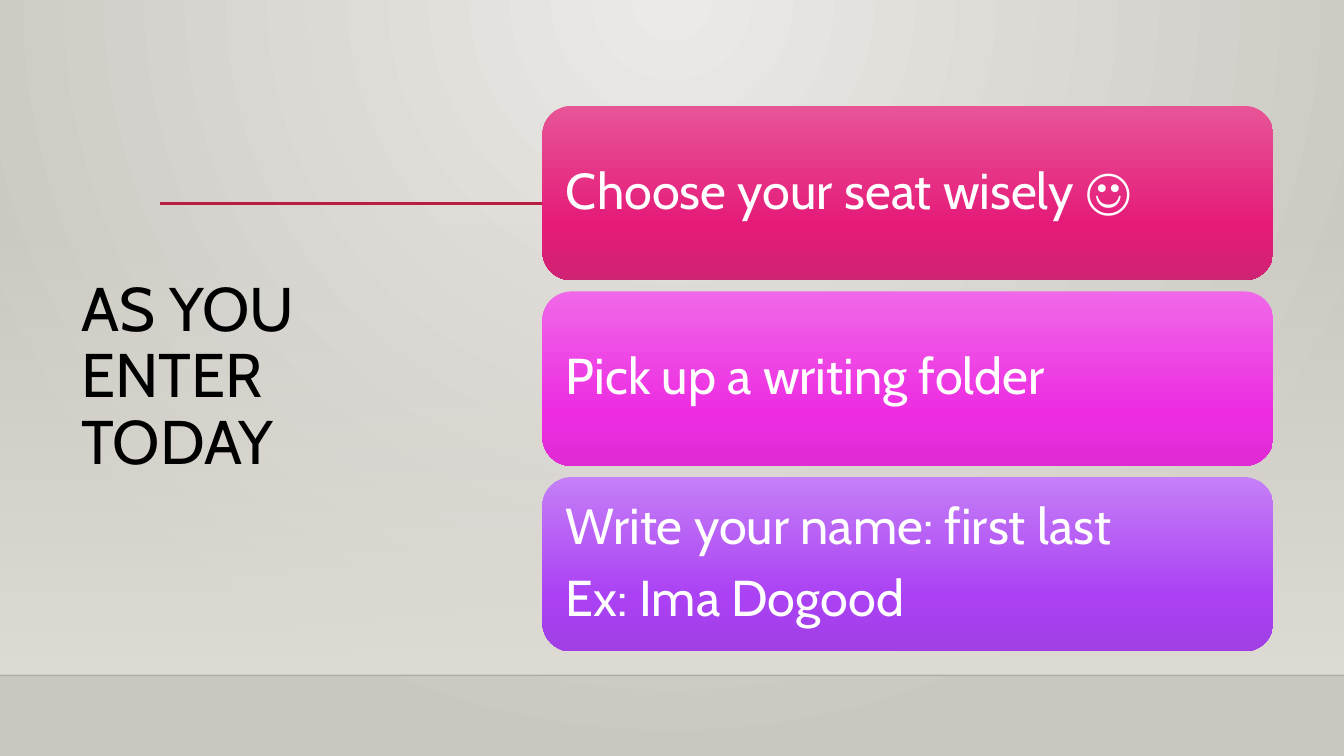
from lxml.etree import SubElement
from pptx import Presentation
from pptx.dml.color import RGBColor
from pptx.enum.shapes import MSO_CONNECTOR, MSO_SHAPE
from pptx.enum.text import MSO_ANCHOR, PP_ALIGN
from pptx.oxml import parse_xml
from pptx.oxml.ns import nsdecls, qn
from pptx.util import Inches, Pt

SLIDE_WIDTH = Inches(13.333)
SLIDE_HEIGHT = Inches(7.5)
FONT = "Cabin"
LINEAR_DOWN = '<a:lin ang="5400000" scaled="0"/>'
GLOW_FROM_TOP = (
    '<a:path path="circle">'
    '<a:fillToRect l="43000" t="0" r="43000" b="100000"/></a:path>'
)

CARD_LEFT, CARD_WIDTH = 40.36, 54.39
CARD_TOP, CARD_HEIGHT, CARD_STEP = 14, 23.07, 24.55
CARDS = [
    (["Choose your seat wisely ☺"], ["E75597", "E51A79", "CF2374"]),
    (["Pick up a writing folder"], ["F068E8", "ED2CE2", "E02BD5"]),
    (["Write your name: first last", "Ex: Ima Dogood"],
     ["C57FF7", "AA41F3", "A13FE5"]),
]


def color(hex_value):
    return RGBColor.from_string(hex_value)


def across(percent):
    return round(SLIDE_WIDTH * percent / 100)


def down(percent):
    return round(SLIDE_HEIGHT * percent / 100)


def area(left, top, width, height):
    return across(left), down(top), across(width), down(height)


def set_gradient(fill, properties, stops, direction=LINEAR_DOWN):
    fill.background()
    stop_xml = "".join(
        f'<a:gs pos="{position * 1000}"><a:srgbClr val="{hex_value}">'
        f'<a:alpha val="{opacity * 1000}"/></a:srgbClr></a:gs>'
        for position, hex_value, opacity in stops
    )
    gradient = parse_xml(
        f'<a:gradFill {nsdecls("a")} rotWithShape="1">'
        f"<a:gsLst>{stop_xml}</a:gsLst>{direction}</a:gradFill>"
    )
    properties.replace(properties.find(qn("a:noFill")), gradient)


def add_panel(slide, kind, place, stops):
    panel = slide.shapes.add_shape(kind, *area(*place))
    panel.shadow.inherit = False
    panel.line.fill.background()
    set_gradient(panel.fill, panel.element.spPr, stops)
    return panel


def add_rule(slide, start, end, height, hex_value, weight, opacity=100):
    rule = slide.shapes.add_connector(
        MSO_CONNECTOR.STRAIGHT,
        across(start), down(height), across(end), down(height),
    )
    rule.line.color.rgb = color(hex_value)
    rule.line.width = Pt(weight)
    properties = rule.element.spPr
    shade = next(properties.iter(qn("a:srgbClr")))
    SubElement(shade, qn("a:alpha")).set("val", str(opacity * 1000))
    SubElement(properties, qn("a:effectLst"))


def write_text(box, lines, size, hex_value, space_after=0):
    frame = box.text_frame
    frame.word_wrap = True
    frame.vertical_anchor = MSO_ANCHOR.MIDDLE
    frame.text = "\n".join(lines)
    for para in frame.paragraphs:
        para.alignment = PP_ALIGN.LEFT
        para.line_spacing = 0.9
        para.space_after = Pt(space_after)
        for span in para.runs:
            span.font.name = FONT
            span.font.size = Pt(size)
            span.font.color.rgb = color(hex_value)


def add_card(slide, row, lines, shades):
    place = (CARD_LEFT, CARD_TOP + row * CARD_STEP, CARD_WIDTH, CARD_HEIGHT)
    stops = [(position, shade, 100)
             for position, shade in zip((0, 69, 100), shades)]
    card = add_panel(slide, MSO_SHAPE.ROUNDED_RECTANGLE, place, stops)
    frame = card.text_frame
    frame.margin_left = frame.margin_right = Inches(0.15)
    frame.margin_top = frame.margin_bottom = Inches(0.15)
    write_text(card, lines, 36, "FFFFFF", 12.6)


def add_backdrop(slide):
    fill = slide.background.fill
    properties = next(slide.element.iter(qn("p:bgPr")))
    set_gradient(fill, properties,
                 [(0, "ECEAE7", 100), (100, "CAC7C1", 100)], GLOW_FROM_TOP)
    add_panel(slide, MSO_SHAPE.RECTANGLE, (0, 29.47, 100, 59.86),
              [(0, "DFDBD5", 0), (100, "DFDBD5", 100)])
    add_rule(slide, 0, 100, 89.33, "000001", 1, opacity=20)
    add_rule(slide, 11.93, 90.77, 26.93, "B71E42", 2.5)


def add_title(slide):
    title = slide.shapes.add_textbox(*area(5.33, 20.13, 29.11, 59.73))
    write_text(title, ["AS YOU ENTER TODAY"], 44, "000000")


def main():
    deck = Presentation()
    deck.slide_width = SLIDE_WIDTH
    deck.slide_height = SLIDE_HEIGHT
    page = deck.slides.add_slide(deck.slide_layouts[6])
    add_backdrop(page)
    add_title(page)
    for row, (lines, shades) in enumerate(CARDS):
        add_card(page, row, lines, shades)
    deck.save("out.pptx")


if __name__ == "__main__":
    main()
